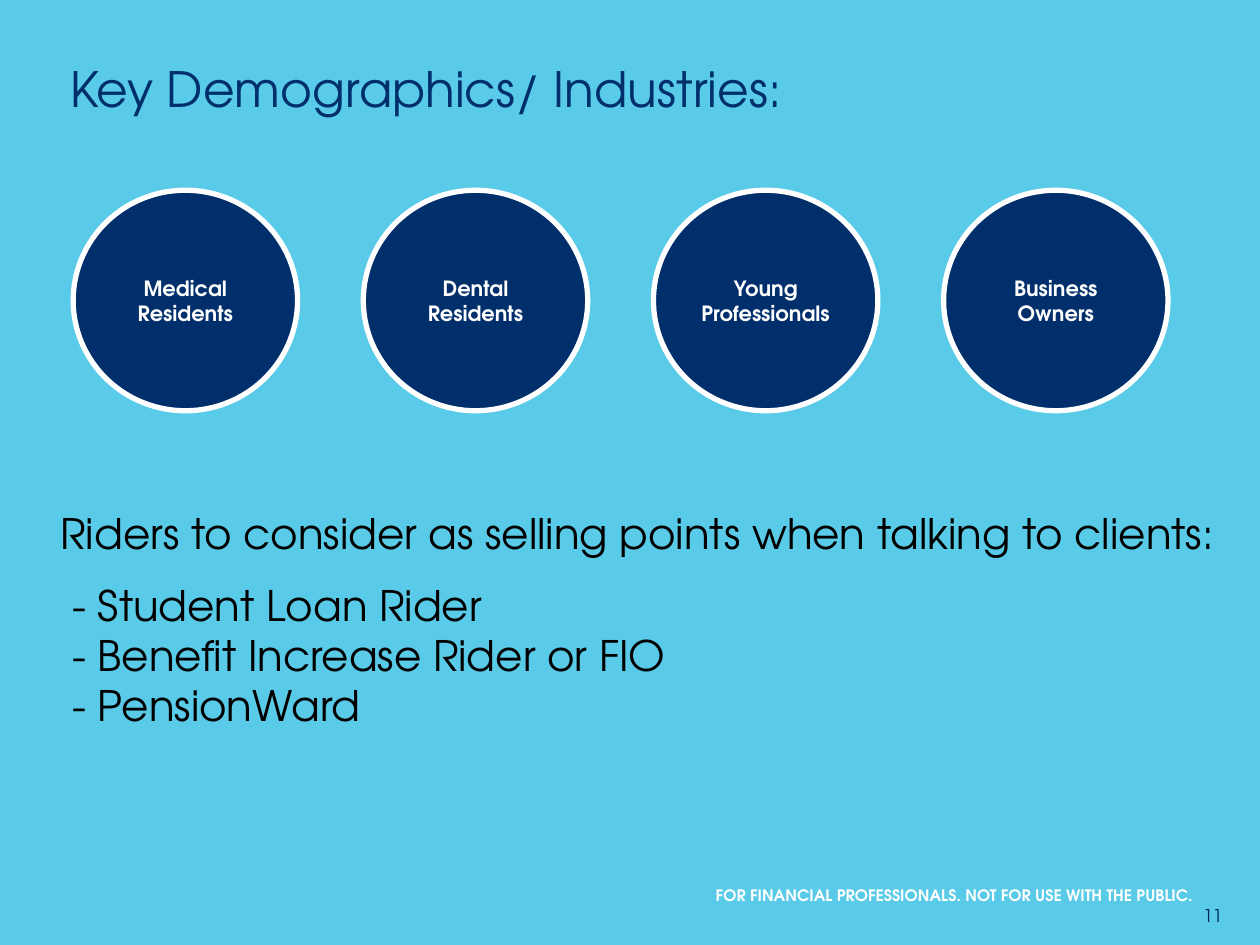
from pptx import Presentation
from pptx.dml.color import RGBColor
from pptx.enum import shapes, text
from pptx.util import Pt

FONT = "TeX Gyre Adventor"
COLORS = {"sky": "59CBE8", "navy": "002F6C", "page": "002060",
          "white": "FFFFFF", "black": "000000"}
GROUPS = ["Medical\nResidents", "Dental Residents",
          "Young\nProfessionals", "Business Owners"]
RIDERS = ["Student Loan Rider", "Benefit Increase Rider or FIO", "PensionWard"]


def color(name):
    """Return a named colour."""
    return RGBColor.from_string(COLORS[name])


def write(frame, content, size, ink, bold=False, align=text.PP_ALIGN.LEFT):
    """Fill a text frame with evenly styled paragraphs and return them."""
    frame.word_wrap = True
    frame.text = content
    for paragraph in frame.paragraphs:
        paragraph.alignment = align
        font = paragraph.font
        font.name, font.size, font.bold = FONT, Pt(size), bold
        font.color.rgb = color(ink)
    return frame.paragraphs


def add_frame(slide, box):
    """Add a text box and return its frame."""
    return slide.shapes.add_textbox(*map(Pt, box)).text_frame


def add_title(slide, box):
    """Place the raised heading, centred in its box height."""
    frame = add_frame(slide, box)
    frame.vertical_anchor = text.MSO_ANCHOR.MIDDLE
    heading = write(frame, "Key Demographics/ Industries:", 48, "navy")[0]
    heading.line_spacing = 0.9
    heading.runs[0]._r.get_or_add_rPr().set("baseline", "30000")


def add_groups(slide, box):
    """Spread one circle per client group evenly across the box."""
    left, top, width, height = box
    diameter = 128.2
    pitch = (width - diameter) / (len(GROUPS) - 1)
    for index, group in enumerate(GROUPS):
        circle = slide.shapes.add_shape(
            shapes.MSO_SHAPE.OVAL, Pt(left + index * pitch), Pt(top),
            Pt(diameter), Pt(height))
        circle.shadow.inherit = False
        circle.fill.solid()
        circle.fill.fore_color.rgb = color("navy")
        circle.line.color.rgb = color("white")
        circle.line.width = Pt(3)
        circle.text_frame.vertical_anchor = text.MSO_ANCHOR.MIDDLE
        write(circle.text_frame, group, 12, "white", True, text.PP_ALIGN.CENTER)


def add_riders(slide, box):
    """Place the lead sentence and the indented list of riders."""
    lead = "Riders to consider as selling points when talking to clients:"
    lines = [lead] + [f"- {rider}" for rider in RIDERS]
    riders = write(add_frame(slide, box), "\n".join(lines), 24, "black")[1:]
    riders[0].space_before = Pt(12)
    for rider in riders:
        rider._p.get_or_add_pPr().set("marL", str(Pt(6.65)))


def add_footer(slide, notice_box, number_box):
    """Place the notice and the page number."""
    write(add_frame(slide, notice_box),
          "FOR FINANCIAL PROFESSIONALS. NOT FOR USE WITH THE PUBLIC.",
          9, "white", True, text.PP_ALIGN.RIGHT)
    write(add_frame(slide, number_box), "11", 10, "page")


def main():
    """Build and save the slide."""
    deck = Presentation()
    deck.slide_width, deck.slide_height = Pt(720), Pt(540)
    slide = deck.slides.add_slide(deck.slide_layouts[6])
    slide.background.fill.solid()
    slide.background.fill.fore_color.rgb = color("sky")
    add_title(slide, (33.1, 28.8, 594, 62.6))
    add_groups(slide, (41.8, 108.7, 625.6, 126))
    add_riders(slide, (27.4, 286.6, 683.3, 146.9))
    add_footer(slide, (49.7, 502.6, 638.6, 18), (680.4, 513.4, 39.6, 19.4))
    deck.save("out.pptx")


if __name__ == "__main__":
    main()
